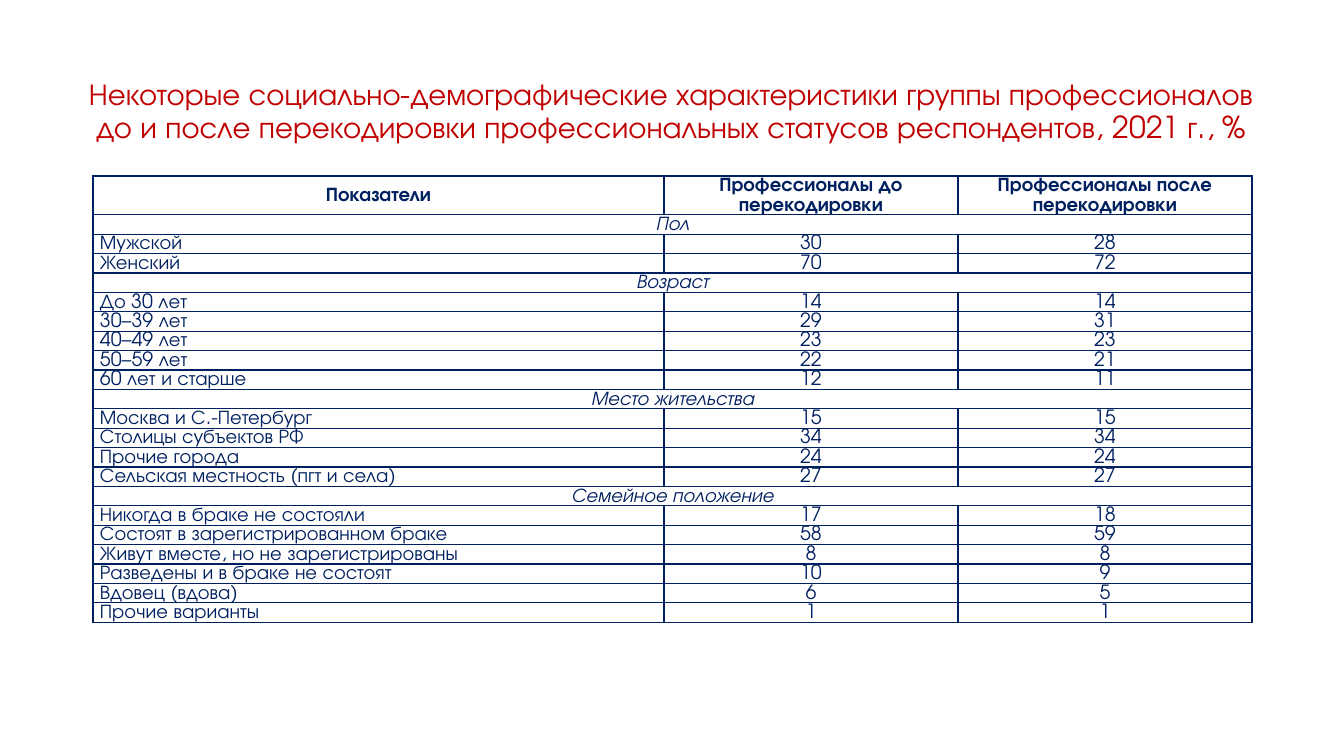
from dataclasses import dataclass

from lxml.etree import SubElement
from pptx import Presentation
from pptx.dml.color import RGBColor
from pptx.enum.text import MSO_ANCHOR as Anchor, MSO_AUTO_SIZE as AutoSize, PP_ALIGN as Align
from pptx.oxml.ns import qn
from pptx.util import Pt

PAGE_WIDTH, PAGE_HEIGHT = 1344, 756
EMU_PER_PX = 12192000 / PAGE_WIDTH


@dataclass(frozen=True)
class Theme:
    font: str = "TeX Gyre Adventor"
    title_color: str = "C00000"
    table_color: str = "002060"
    title_size: float = 21.6
    table_size: float = 14
    border_width: float = 1


THEME = Theme()

TITLE = ("Некоторые социально-демографические характеристики группы профессионалов "
         "до и после перекодировки профессиональных статусов респондентов, 2021 г., %")
HEADER = ("Показатели", "Профессионалы до перекодировки", "Профессионалы после перекодировки")
SECTIONS = {
    "Пол": [("Мужской", 30, 28), ("Женский", 70, 72)],
    "Возраст": [
        ("До 30 лет", 14, 14),
        ("30–39 лет", 29, 31),
        ("40–49 лет", 23, 23),
        ("50–59 лет", 22, 21),
        ("60 лет и старше", 12, 11),
    ],
    "Место жительства": [
        ("Москва и С.-Петербург", 15, 15),
        ("Столицы субъектов РФ", 34, 34),
        ("Прочие города", 24, 24),
        ("Сельская местность (пгт и села)", 27, 27),
    ],
    "Семейное положение": [
        ("Никогда в браке не состояли", 17, 18),
        ("Состоят в зарегистрированном браке", 58, 59),
        ("Живут вместе, но не зарегистрированы", 8, 8),
        ("Разведены и в браке не состоят", 10, 9),
        ("Вдовец (вдова)", 6, 5),
        ("Прочие варианты", 1, 1),
    ],
}


def px(length):
    return round(length * EMU_PER_PX)


def write(frame, text, *, size, color, align=Align.CENTER, bold=False, italic=False,
          line_spacing=1.0, space_after=0):
    para = frame.paragraphs[0]
    para.alignment = align
    para.line_spacing = line_spacing
    para.space_before = Pt(0)
    para.space_after = Pt(space_after)
    span = para.add_run()
    span.text = text
    font = span.font
    font.name, font.size = THEME.font, Pt(size)
    font.bold, font.italic = bold, italic
    font.color.rgb = RGBColor.from_string(color)


def add_title(page, box):
    title = page.shapes.title
    title.left, title.top, title.width, title.height = map(px, box)
    frame = title.text_frame
    frame.word_wrap = True
    frame.auto_size = AutoSize.NONE
    frame.vertical_anchor = Anchor.MIDDLE
    write(frame, TITLE, size=THEME.title_size, color=THEME.title_color, line_spacing=0.9)


def format_cell(cell):
    cell.margin_left = cell.margin_right = px(7)
    cell.margin_top = cell.margin_bottom = 0
    # Borders go before the fill in the cell properties
    properties = cell._tc.get_or_add_tcPr()
    for side in ("a:lnL", "a:lnR", "a:lnT", "a:lnB"):
        line = SubElement(properties, qn(side), w=str(Pt(THEME.border_width)))
        fill = SubElement(line, qn("a:solidFill"))
        SubElement(fill, qn("a:srgbClr"), val=THEME.table_color)
    cell.fill.background()


def add_indicator_table(page, box):
    # Section names fill one merged row each
    rows = [HEADER]
    for section, indicators in SECTIONS.items():
        rows += [(section,), *indicators]

    left, top, width, height = box
    value_width = 294
    widths = (width - 2 * value_width, value_width, value_width)
    row_height = height // (len(rows) + 1)
    table = page.shapes.add_table(len(rows), len(widths), *map(px, box)).table
    table.first_row = table.horz_banding = False
    for column, column_width in zip(table.columns, widths):
        column.width = px(column_width)

    for row_index, values in enumerate(rows):
        is_header = row_index == 0
        is_section = len(values) == 1
        table.rows[row_index].height = px(row_height * (2 if is_header else 1))
        cells = list(table.rows[row_index].cells)
        for cell in cells:
            format_cell(cell)
            cell.vertical_anchor = Anchor.MIDDLE if is_header else Anchor.TOP
        if is_section:
            cells[0].merge(cells[-1])
        for column_index, (cell, value) in enumerate(zip(cells, values)):
            is_label = column_index == 0 and not (is_header or is_section)
            write(cell.text_frame, str(value), size=THEME.table_size, color=THEME.table_color,
                  align=Align.JUSTIFY if is_label else Align.CENTER,
                  bold=is_header, italic=is_section, line_spacing=1.07, space_after=8)


def main():
    deck = Presentation()
    deck.slide_width, deck.slide_height = px(PAGE_WIDTH), px(PAGE_HEIGHT)
    page = deck.slides.add_slide(deck.slide_layouts.get_by_name("Title Only"))
    add_title(page, (62, 60, 1219, 104))
    add_indicator_table(page, (93, 176, 1159, 446))
    deck.save("out.pptx")


if __name__ == "__main__":
    main()
